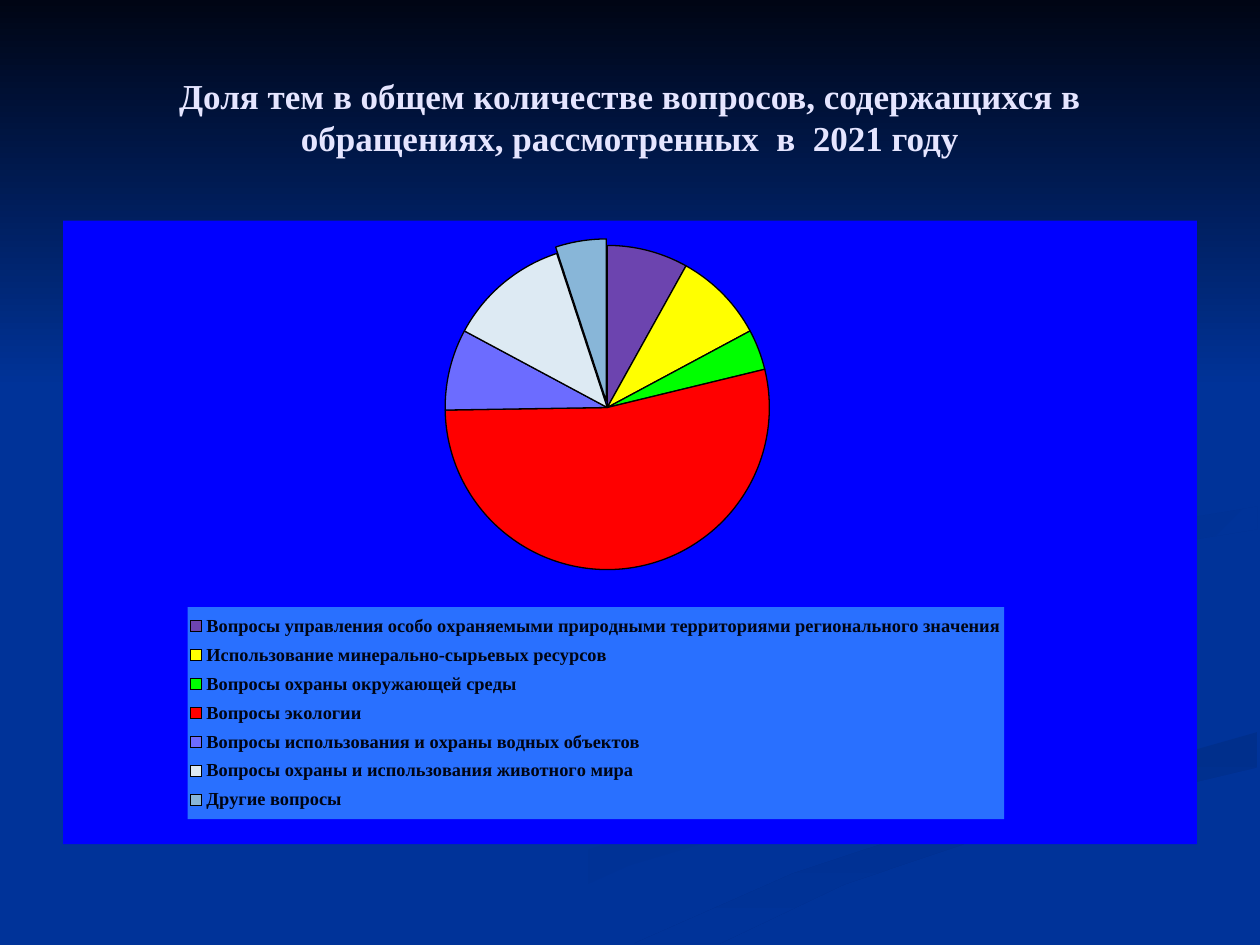
from lxml import etree
from pptx import Presentation
from pptx import util as u
from pptx.chart import data
from pptx.dml.color import RGBColor
from pptx.enum import chart as ch, shapes, text
from pptx.oxml import ns

HEX = {"night": "000514", "navy": "003399", "shade": "002F8C", "dusk": "003193",
       "title": "E5E5FF", "panel": "0000FF", "legend": "2970FF", "outline": "000000",
       "white": "FFFFFF"}
COLOR = {name: RGBColor.from_string(value) for name, value in HEX.items()}
FONT = "Times New Roman"

deck = Presentation()
deck.slide_width, deck.slide_height = u.Inches(10), u.Inches(7.5)
W, H = deck.slide_width, deck.slide_height
slide = deck.slides.add_slide(deck.slide_layouts[5])
slide.background.fill.solid()
slide.background.fill.fore_color.rgb = COLOR["navy"]


def paint(shape, start, end, angle):
    shape.shadow.inherit = False
    shape.line.fill.background()
    shape.fill.gradient()
    shape.fill.gradient_angle = (360 - angle) % 360
    for stop, name in zip(shape.fill.gradient_stops, (start, end)):
        stop.color.rgb = COLOR[name]


def place(parent, index, x, y, w, h, inner=False):
    for old in parent.findall(ns.qn("c:layout")):
        parent.remove(old)
    layout = etree.Element(ns.qn("c:layout"))
    manual = etree.SubElement(layout, ns.qn("c:manualLayout"))
    target = [("layoutTarget", "inner")] if inner else []
    for tag, value in target + [("xMode", "edge"), ("yMode", "edge"),
                                ("x", x), ("y", y), ("w", w), ("h", h)]:
        etree.SubElement(manual, ns.qn(f"c:{tag}")).set("val", str(value))
    parent.insert(index, layout)


ribbons = [
    ("navy", "dusk", 0, [(800, 581), (579, 639), (417, 690), (300, 749),
                         (361, 749), (499, 687), (676, 634)]),
    ("shade", "navy", 90, [(503, 749), (571, 749), (670, 702), (821, 651), (998, 609),
                           (998, 581), (797, 638), (630, 693)]),
    ("dusk", "navy", 45, [(781, 460), (826, 496), (805, 472), (859, 443), (998, 420),
                          (998, 402), (865, 424)]),
]
for start, end, angle, points in ribbons:
    outline = slide.shapes.build_freeform(*points[0], scale=W / 1000)
    outline.add_line_segments(points[1:], close=True)
    paint(outline.convert_to_shape(), start, end, angle)

sky = slide.shapes.add_shape(shapes.MSO_SHAPE.RECTANGLE, 0, 0, W, int(H * 0.41))
paint(sky, "night", "navy", 90)

heading = slide.shapes.title
slide.shapes._spTree.append(heading._element)
heading.left, heading.top = int(W * 0.05), int(H * 0.04)
heading.width, heading.height = int(W * 0.9), int(H / 6)
heading.text_frame.word_wrap = True
heading.text_frame.vertical_anchor = text.MSO_ANCHOR.MIDDLE
line = heading.text_frame.paragraphs[0]
line.alignment = text.PP_ALIGN.CENTER
run = line.add_run()
run.text = ("Доля тем в общем количестве вопросов, содержащихся в "
            "обращениях, рассмотренных  в  2021 году")
run.font.name, run.font.size, run.font.bold = FONT, u.Pt(20), True
run.font.color.rgb = COLOR["title"]

topics = [
    ("Вопросы управления особо охраняемыми природными территориями регионального значения",
     8, "6C44AF"),
    ("Использование минерально-сырьевых ресурсов", 9, "FFFF00"),
    ("Вопросы охраны окружающей среды", 4, "00FF00"),
    ("Вопросы экологии", 53, "FF0000"),
    ("Вопросы использования и охраны водных объектов", 8, "6C6CFF"),
    ("Вопросы охраны и использования животного мира", 12, "DDEAF3"),
    ("Другие вопросы", 5, "88B6D8"),
]
shares = data.CategoryChartData()
shares.categories = [topic for topic, _, _ in topics]
shares.add_series("Series 1", [share for _, share, _ in topics])
pie = slide.shapes.add_chart(ch.XL_CHART_TYPE.PIE, int(W * 0.05), int(H * 0.7 / 3),
                             int(W * 0.9), int(H * 0.66), shares).chart
pie.has_title = False
pie.font.name, pie.font.size = FONT, u.Pt(10)
pie.font.color.rgb = COLOR["white"]
pie.plots[0].vary_by_categories = True

slices = pie.plots[0].series[0]
for i, (_, _, shade) in enumerate(topics):
    look = slices.points[i].format
    look.fill.solid()
    look.fill.fore_color.rgb = RGBColor.from_string(shade)
    look.line.color.rgb = COLOR["outline"]
    look.line.width = u.Pt(0.75)
other = slices._element.findall(ns.qn("c:dPt"))[-1]
explosion = etree.Element(ns.qn("c:explosion"))
explosion.set("val", "4")
other.find(ns.qn("c:spPr")).addprevious(explosion)

pie.has_legend = True
key = pie.legend
key.position = ch.XL_LEGEND_POSITION.BOTTOM
key.include_in_layout = False
key.font.name, key.font.size, key.font.bold = FONT, u.Pt(10.5), True
key.font.color.rgb = COLOR["night"]
place(key._element, 1, 0.11, 0.62, 0.72, 0.34)
place(pie._chartSpace.chart.plotArea, 0, 0, 0.04, 0.96, 0.52, inner=True)

for area, name in ((key._element, "legend"), (pie._chartSpace, "panel")):
    look = etree.Element(ns.qn("c:spPr"))
    fill = etree.SubElement(look, ns.qn("a:solidFill"))
    etree.SubElement(fill, ns.qn("a:srgbClr")).set("val", HEX[name])
    etree.SubElement(etree.SubElement(look, ns.qn("a:ln")), ns.qn("a:noFill"))
    area.find(ns.qn("c:txPr")).addprevious(look)

deck.save("out.pptx")
